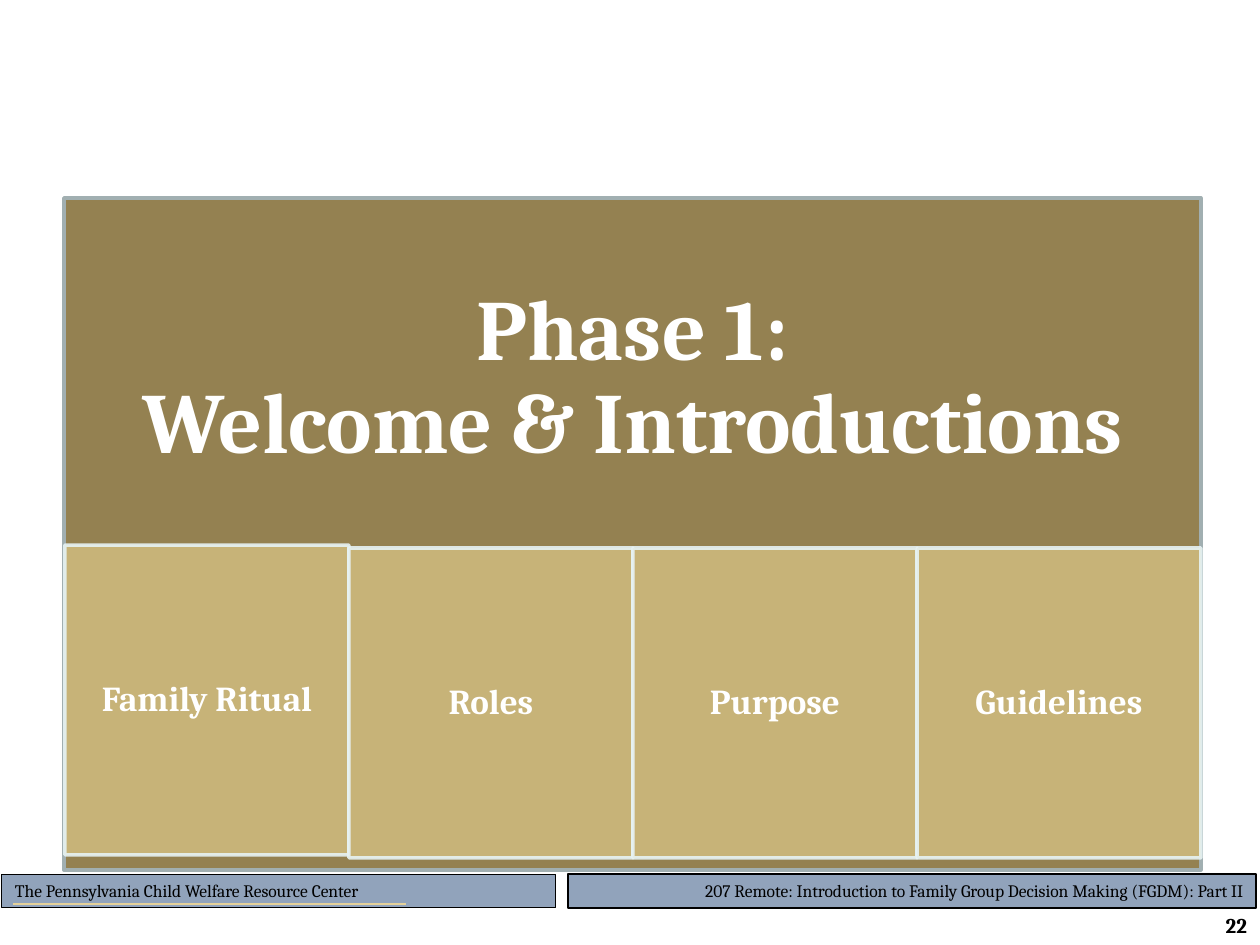
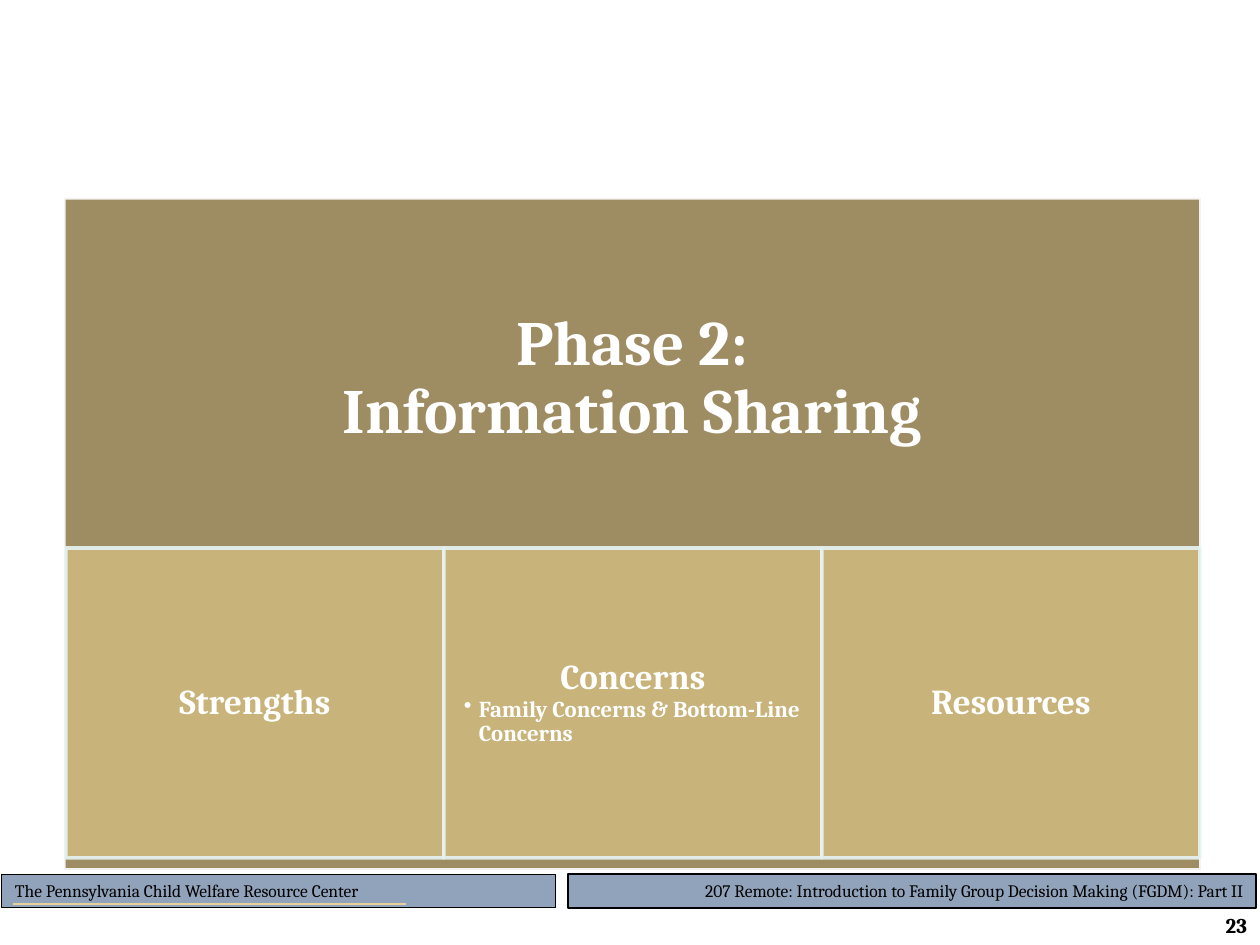
import dataclasses

import lxml.etree
import pptx
import pptx.dml.color
import pptx.enum.shapes
import pptx.enum.text
import pptx.oxml.ns
import pptx.util

EMU_PER_PX = 914400 / 126
ALIGN = pptx.enum.text.PP_ALIGN
ANCHOR = pptx.enum.text.MSO_ANCHOR


@dataclasses.dataclass(frozen=True)
class Theme:
    font: str = "Cambria"
    white: str = "FFFFFF"
    ink: str = "000000"
    footer_band: str = "91A3BB"
    footer_rule: str = "E5D199"
    phase: str = "948151"
    phase_border: str = "A1AFB1"
    step: str = "CDB97D"
    step_border: str = "E7F3F4"
    translucent: int = 90
    border: float = 2
    step_size: int = 20
    detail_size: int = 13
    footer_size: int = 10
    number_size: int = 12


THEME = Theme()


def px(length):
    return pptx.util.Emu(round(length * EMU_PER_PX))


def rgb(value):
    return pptx.dml.color.RGBColor.from_string(value)


def set_all(target, values):
    for name, value in values.items():
        setattr(target, name, value)


def add_child(parent, tag, **attributes):
    return lxml.etree.SubElement(parent, pptx.oxml.ns.qn(tag), attributes)


def paint(fill, color, opacity=100):
    fill.solid()
    fill.fore_color.rgb = rgb(color)
    if opacity < 100:
        for swatch in fill._xPr.iter(pptx.oxml.ns.qn("a:srgbClr")):
            add_child(swatch, "a:alpha", val=str(opacity * 1000))


def add_panel(slide, box, color, border, weight, opacity=100, border_opacity=100):
    panel = slide.shapes.add_shape(
        pptx.enum.shapes.MSO_SHAPE.RECTANGLE, *map(px, box))
    panel.shadow.inherit = False
    paint(panel.line.fill, border, border_opacity)
    panel.line.width = pptx.util.Pt(weight)
    paint(panel.fill, color, opacity)
    return panel


def frame_text(shape, anchor, margins=(13, 6)):
    side, end = map(px, margins)
    set_all(shape.text_frame, {
        "word_wrap": True, "vertical_anchor": anchor,
        "margin_left": side, "margin_right": side,
        "margin_top": end, "margin_bottom": end})
    return shape.text_frame


def write(paragraph, text, size, color, align, bold=True, spacing=1.0):
    paragraph.text = text
    set_all(paragraph, {"alignment": align, "line_spacing": spacing})
    for run in paragraph.runs:
        set_all(run.font, {
            "name": THEME.font, "size": pptx.util.Pt(size), "bold": bold})
        run.font.color.rgb = rgb(color)


def add_footer_band(slide, box, text, align, weight):
    band = add_panel(slide, box, THEME.footer_band, THEME.ink, weight)
    frame = frame_text(band, ANCHOR.TOP)
    write(frame.paragraphs[0], text, THEME.footer_size, THEME.ink, align, bold=False)


def add_footer(slide, number):
    add_footer_band(
        slide, (568, 874, 688, 34),
        "207 Remote: Introduction to Family Group Decision Making (FGDM): Part II",
        ALIGN.RIGHT, 0.75)
    add_footer_band(
        slide, (2, 874, 554, 34),
        "The Pennsylvania Child Welfare Resource Center", ALIGN.LEFT, 0.5)
    rule = slide.shapes.add_connector(
        pptx.enum.shapes.MSO_CONNECTOR.STRAIGHT, *map(px, (13, 904, 406, 904)))
    rule.line.color.rgb = rgb(THEME.footer_rule)
    rule.line.width = pptx.util.Pt(0.75)
    add_child(rule._element.spPr, "a:effectLst")

    page = slide.shapes.add_textbox(*map(px, (1120, 912, 140, 26)))
    frame = frame_text(page, ANCHOR.MIDDLE)
    write(frame.paragraphs[0], str(number), THEME.number_size, THEME.ink, ALIGN.RIGHT)


def add_phase(slide, heading, size, inset, border, opacity):
    add_panel(slide, (64, 198, 1137, 672), THEME.phase, border, THEME.border, opacity)
    title = slide.shapes.add_textbox(*map(px, (64, 198, 1137, 363)))
    frame = frame_text(title, ANCHOR.MIDDLE, (inset, inset))
    write(frame.paragraphs[0], heading, size, THEME.white, ALIGN.CENTER, spacing=0.9)


def add_detail(frame, text):
    detail = frame.add_paragraph()
    detail.level = 1
    properties = detail._p.get_or_add_pPr()
    properties.set("marL", str(px(15)))
    properties.set("indent", str(px(-15)))
    add_child(properties, "a:buChar", char="•")
    write(detail, text, THEME.detail_size, THEME.white, ALIGN.LEFT, spacing=0.9)


def add_step(slide, box, name, details):
    step = add_panel(slide, box, THEME.step, THEME.step_border, THEME.border,
                     THEME.translucent, THEME.translucent)
    frame = frame_text(step, ANCHOR.MIDDLE, (20, 4))
    write(frame.paragraphs[0], name, THEME.step_size, THEME.white,
          ALIGN.CENTER, spacing=0.9)
    for detail in details:
        add_detail(frame, detail)


def add_steps(slide, left, width, steps, first_lift=0):
    for index, (name, *details) in enumerate(steps):
        top = 548 - (first_lift if index == 0 else 0)
        add_step(slide, (left + index * width, top, width, 310), name, details)


def add_slide(deck, number):
    slide = deck.slides.add_slide(deck.slide_layouts[6])
    add_footer(slide, number)
    return slide


def main():
    deck = pptx.Presentation()
    set_all(deck, {"slide_width": px(1260), "slide_height": px(945)})

    welcome = add_slide(deck, 22)
    add_phase(welcome, "Phase 1:\vWelcome & Introductions", 49, 48,
              THEME.phase_border, 100)
    add_steps(welcome, 65, 284,
              [("Family Ritual",), ("Roles",), ("Purpose",), ("Guidelines",)],
              first_lift=3)

    sharing = add_slide(deck, 23)
    add_phase(sharing, "Phase 2:\vInformation Sharing", 36, 35,
              THEME.white, THEME.translucent)
    add_steps(sharing, 66, 378,
              [("Strengths",),
               ("Concerns", "Family Concerns & Bottom-Line Concerns"),
               ("Resources",)])

    deck.save("out.pptx")


if __name__ == "__main__":
    main()
